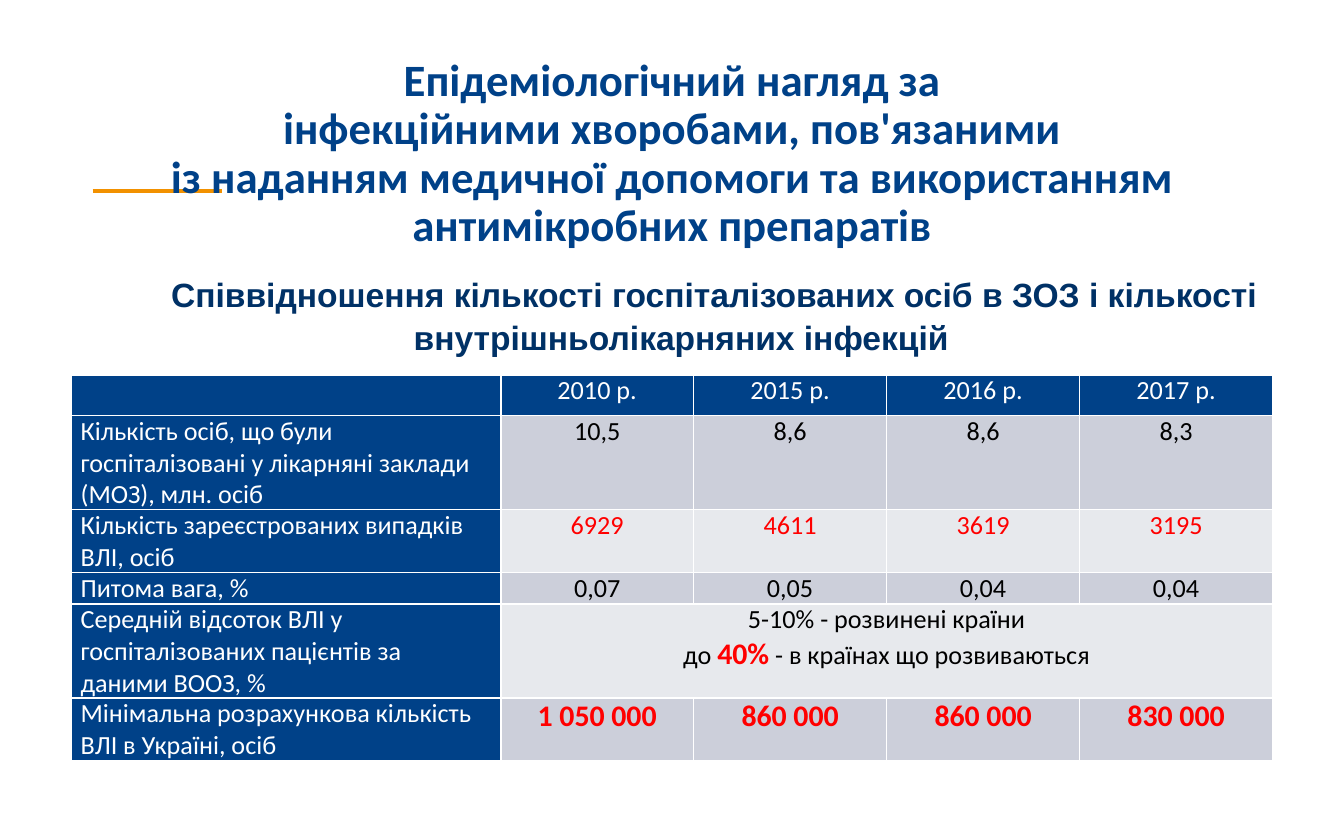
from lxml import etree
from pptx import Presentation, util as u
from pptx.dml.color import RGBColor
from pptx.enum import shapes, text
from pptx.oxml.ns import qn

BLUE = RGBColor(0x00, 0x41, 0x88)
NAVY = RGBColor(0x00, 0x31, 0x66)
ORANGE = RGBColor(0xF2, 0x91, 0x00)
RED = RGBColor(0xFF, 0x00, 0x00)
BLACK = RGBColor(0x00, 0x00, 0x00)
WHITE = RGBColor(0xFF, 0xFF, 0xFF)
BANDS = [RGBColor(0xCC, 0xCF, 0xDA), RGBColor(0xE7, 0xE9, 0xED)]

TITLE = [
    "Епідеміологічний нагляд за",
    "інфекційними хворобами, пов'язаними",
    "із наданням медичної допомоги та використанням",
    "антимікробних препаратів",
]
SUBTITLE = ("Співвідношення кількості госпіталізованих осіб в ЗОЗ "
            "і кількості внутрішньолікарняних інфекцій")
YEARS = ["2010 р.", "2015 р.", "2016 р.", "2017 р."]
PLAIN = (14, BLACK, False)
ALERT = (14, RED, False)
STRONG = (16, RED, True)
HEADING = (14, WHITE, False)
ROWS = [
    ("Кількість осіб, що були госпіталізовані у лікарняні заклади (МОЗ), млн. осіб",
     3, PLAIN, ["10,5", "8,6", "8,6", "8,3"]),
    ("Кількість зареєстрованих випадків ВЛІ, осіб",
     2, ALERT, ["6929", "4611", "3619", "3195"]),
    ("Питома вага, %", 1, PLAIN, ["0,07", "0,05", "0,04", "0,04"]),
    ("Середній відсоток ВЛІ у госпіталізованих пацієнтів за даними ВООЗ, %",
     3, PLAIN, []),
    ("Мінімальна розрахункова кількість ВЛІ в Україні, осіб",
     2, STRONG, ["1 050 000", "860 000", "860 000", "830 000"]),
]
WHO_SHARE = [
    [("5-10% - розвинені країни", PLAIN)],
    [("до ", PLAIN), ("40%", STRONG), (" - в країнах що розвиваються", PLAIN)],
]


class SlideBuilder:
    font = "Calibri"
    center = text.PP_ALIGN.CENTER
    left = text.PP_ALIGN.LEFT

    def __init__(self, deck):
        self.deck = deck
        self.page = deck.slides.add_slide(deck.slide_layouts[5])

    def x(self, percent):
        return round(self.deck.slide_width * percent / 100)

    def y(self, percent):
        return round(self.deck.slide_height * percent / 100)

    def area(self, left, top, width, height):
        return self.x(left), self.y(top), self.x(width), self.y(height)

    def span(self, para, words, look, font=None):
        span = para.add_run()
        span.text = words
        span.font.name = font or self.font
        span.font.size = u.Pt(look[0])
        span.font.color.rgb = look[1]
        span.font.bold = look[2]

    def title(self, lines, *area):
        box = self.page.shapes.title
        box.left, box.top, box.width, box.height = self.area(*area)
        frame = box.text_frame
        frame.auto_size = text.MSO_AUTO_SIZE.NONE
        frame.vertical_anchor = text.MSO_ANCHOR.MIDDLE
        para = frame.paragraphs[0]
        para.alignment = self.center
        para.line_spacing = 0.9
        for index, line in enumerate(lines):
            if index:
                para.add_line_break()
            self.span(para, line, (24, BLUE, True))

    def accent(self, start, end, top):
        line = self.page.shapes.add_connector(
            shapes.MSO_CONNECTOR.STRAIGHT,
            self.x(start), self.y(top), self.x(end), self.y(top))
        line.line.color.rgb = ORANGE
        line.line.width = u.Pt(2)
        etree.SubElement(line.element.spPr, qn("a:effectLst"))
        self.page.shapes.title.element.addprevious(line.element)

    def subtitle(self, words, *area):
        box = self.page.shapes.add_textbox(*self.area(*area))
        frame = box.text_frame
        frame.word_wrap = True
        para = frame.paragraphs[0]
        para.alignment = self.center
        para.line_spacing = 1.07
        para._p.get_or_add_pPr().set("indent", str(u.Inches(0.49)))
        self.span(para, words, (18, NAVY, True), "Arial")

    def cell(self, cell, paragraphs, fill, align):
        cell.margin_left = cell.margin_right = u.Inches(0.07)
        cell.margin_top = cell.margin_bottom = 0
        for index, spans in enumerate(paragraphs):
            frame = cell.text_frame
            para = frame.add_paragraph() if index else frame.paragraphs[0]
            para.alignment = align
            for words, look in spans:
                self.span(para, words, look)
        self.borders(cell)
        cell.fill.solid()
        cell.fill.fore_color.rgb = fill

    def borders(self, cell):
        properties = cell._tc.get_or_add_tcPr()
        for side in ("a:lnL", "a:lnR", "a:lnT", "a:lnB"):
            edge = etree.SubElement(properties, qn(side), w=str(u.Pt(1)))
            paint = etree.SubElement(edge, qn("a:solidFill"))
            etree.SubElement(paint, qn("a:srgbClr"), val=str(WHITE))

    def table(self, years, rows, shared, left, top, label_width, year_width, line_height):
        heights = [1] + [row[1] for row in rows]
        widths = [label_width] + [year_width] * len(years)
        table = self.page.shapes.add_table(
            len(heights), len(widths),
            *self.area(left, top, sum(widths), sum(heights) * line_height)).table
        for column, width in zip(table.columns, widths):
            column.width = self.x(width)
        for row, lines in zip(table.rows, heights):
            row.height = self.y(lines * line_height)
        for column, year in enumerate([""] + years):
            spans = [(year, HEADING)] if year else []
            self.cell(table.cell(0, column), [spans], BLUE, self.center)
        for index, (label, lines, look, values) in enumerate(rows, 1):
            band = BANDS[(index - 1) % 2]
            self.cell(table.cell(index, 0), [[(label, HEADING)]], BLUE, self.left)
            for column, value in enumerate(values, 1):
                self.cell(table.cell(index, column), [[(value, look)]], band, self.center)
            if not values:
                table.cell(index, 1).merge(table.cell(index, len(years)))
                self.cell(table.cell(index, 1), shared, band, self.center)


def main():
    deck = Presentation()
    deck.slide_width, deck.slide_height = u.Inches(10), u.Inches(6.25)
    slide = SlideBuilder(deck)
    slide.title(TITLE, 6.9, 5.28, 86.2, 26.24)
    slide.accent(6.9, 16.5, 22.72)
    slide.subtitle(SUBTITLE, 0, 31.52, 101.4, 16.16)
    slide.table(YEARS, ROWS, WHO_SHARE, 5.3, 44.64, 31.96, 14.36, 3.73)
    deck.save("out.pptx")


if __name__ == "__main__":
    main()
